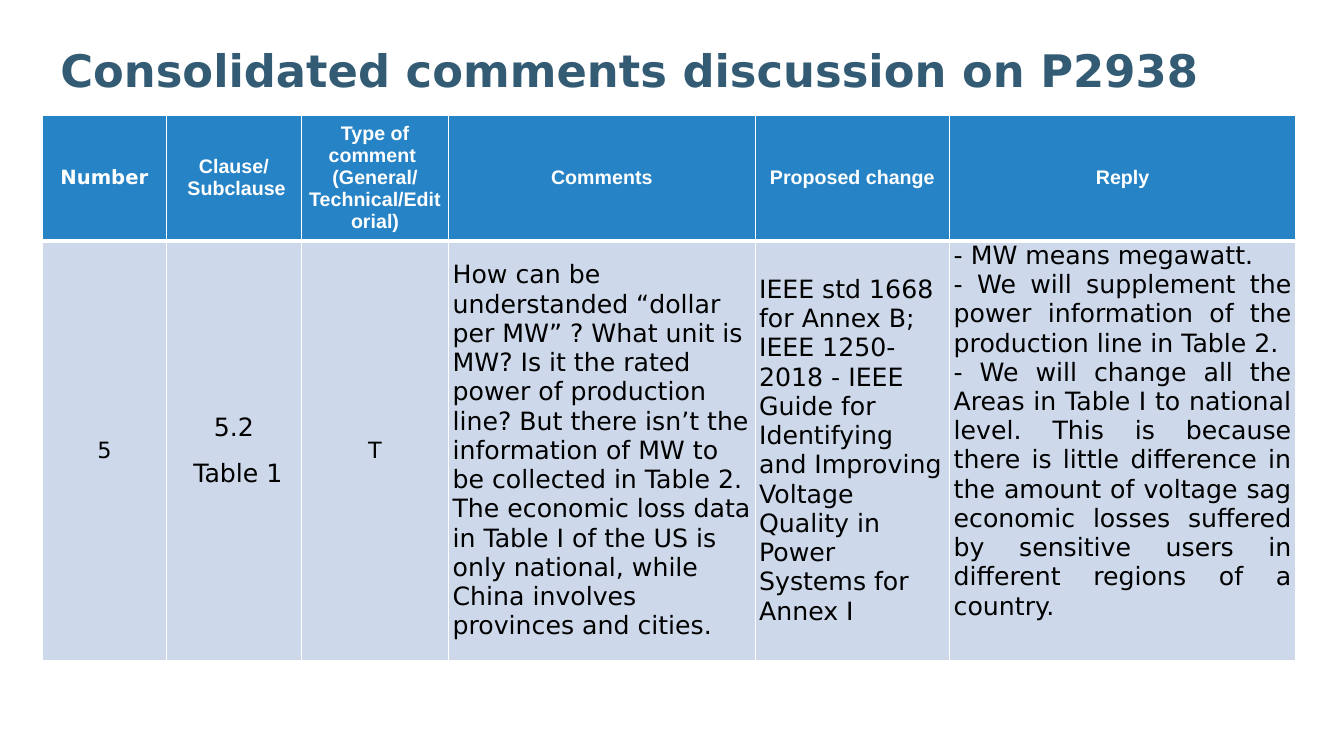
from lxml.etree import SubElement
from pptx import Presentation
from pptx.dml.color import RGBColor
from pptx.enum.text import MSO_ANCHOR as Anchor, PP_ALIGN as Align
from pptx.oxml.ns import qn
from pptx.util import Inches, Pt

WHITE, BLACK = "FFFFFF", "000000"
TITLE_COLOR, HEADER_FILL, BODY_FILL = "335B74", "2683C6", "CDD9EA"
SANS, ARIAL = "DejaVu Sans", "Arial"


def color(hex_string):
    return RGBColor.from_string(hex_string)


def write(frame, paragraphs, size=18, font=SANS, ink=BLACK, bold=False,
          align=Align.LEFT, after=0, anchor=Anchor.MIDDLE):
    frame.word_wrap = True
    frame.vertical_anchor = anchor
    for index, text in enumerate(paragraphs):
        paragraph = frame.add_paragraph() if index else frame.paragraphs[0]
        paragraph.alignment = align
        paragraph.space_after = Pt(after)
        run = paragraph.add_run()
        run.text = text
        run.font.size = Pt(size)
        run.font.name = font
        run.font.bold = bold
        run.font.color.rgb = color(ink)


class CommentSlide:
    def __init__(self, presentation):
        self.slide = presentation.slides.add_slide(presentation.slide_layouts[6])

    def title(self, text, left, top, width, height):
        box = self.slide.shapes.add_textbox(
            Inches(left), Inches(top), Inches(width), Inches(height))
        write(box.text_frame, [text], size=32, ink=TITLE_COLOR, bold=True,
              anchor=Anchor.TOP)

    def table(self, left, top, widths, heights):
        frame = self.slide.shapes.add_table(
            len(heights), len(widths), Inches(left), Inches(top),
            Inches(sum(widths)), Inches(sum(heights)))
        table = frame.table
        table.horz_banding = False
        for column, width in zip(table.columns, widths):
            column.width = Inches(width)
        for row, height in zip(table.rows, heights):
            row.height = Inches(height)
        return table

    def cell(self, cell, paragraphs, fill, side=0.07, edge=0,
             top_line=1, bottom_line=1, **text_format):
        cell.margin_left = cell.margin_right = Inches(side)
        cell.margin_top = cell.margin_bottom = Inches(edge)
        anchor = text_format.pop("anchor", Anchor.MIDDLE)
        write(cell.text_frame, paragraphs, **text_format)
        cell.vertical_anchor = anchor
        self.borders(cell, L=1, R=1, T=top_line, B=bottom_line)
        cell.fill.solid()
        cell.fill.fore_color.rgb = color(fill)

    def borders(self, cell, **weights):
        properties = cell._tc.get_or_add_tcPr()
        for side, points in weights.items():
            line = SubElement(properties, qn(f"a:ln{side}"), w=str(Pt(points)))
            solid = SubElement(line, qn("a:solidFill"))
            SubElement(solid, qn("a:srgbClr"), val=WHITE)


HEADERS = [
    ["Number"],
    ["Clause/", " Subclause"],
    ["Type of comment ", "(General/ Technical/Editorial)"],
    ["Comments"],
    ["Proposed change"],
    ["Reply"],
]

# Each body cell: paragraphs and its format
COMMENT = [
    (["5"], dict(size=16, align=Align.CENTER, after=12)),
    (["5.2", " Table 1"], dict(align=Align.CENTER, after=12)),
    (["T"], dict(size=16, align=Align.CENTER, side=0.04, edge=0.05)),
    (["How can be understanded “dollar per MW” ? What unit is MW? Is it the "
      "rated power of production line? But there isn’t the information of MW "
      "to be collected in Table 2.",
      "The economic loss data in Table I of the US is only national, while "
      "China involves provinces and cities."], dict(side=0.04, edge=0.05)),
    (["IEEE std 1668 for Annex B;",
      "IEEE 1250-2018 - IEEE Guide for Identifying and Improving Voltage "
      "Quality in Power Systems for Annex I"], dict(side=0.04)),
    (["- MW means megawatt.",
      "- We will supplement the power information of the production line in "
      "Table 2.",
      "- We will change all the Areas in Table I to national level. This is "
      "because there is little difference in the amount of voltage sag "
      "economic losses suffered by sensitive users in different regions of a "
      "country."], dict(side=0.04, align=Align.JUSTIFY, anchor=Anchor.TOP)),
]


def main():
    presentation = Presentation()
    presentation.slide_width = Inches(13.33)
    presentation.slide_height = Inches(7.5)
    page = CommentSlide(presentation)

    # Title
    page.title("Consolidated comments discussion on P2938", 0.5, 0.37, 12.04, 1.25)

    # Comment table
    table = page.table(0.42, 1.14, [1.23, 1.34, 1.46, 3.04, 1.93, 3.43], [1.25, 4.16])
    for column, header in enumerate(HEADERS):
        page.cell(table.cell(0, column), header, HEADER_FILL, bottom_line=3,
                  size=14, font=ARIAL if column else SANS, ink=WHITE, bold=True,
                  align=Align.CENTER)
    for column, (paragraphs, cell_format) in enumerate(COMMENT):
        page.cell(table.cell(1, column), paragraphs, BODY_FILL, top_line=3,
                  **cell_format)

    presentation.save("out.pptx")


if __name__ == "__main__":
    main()
